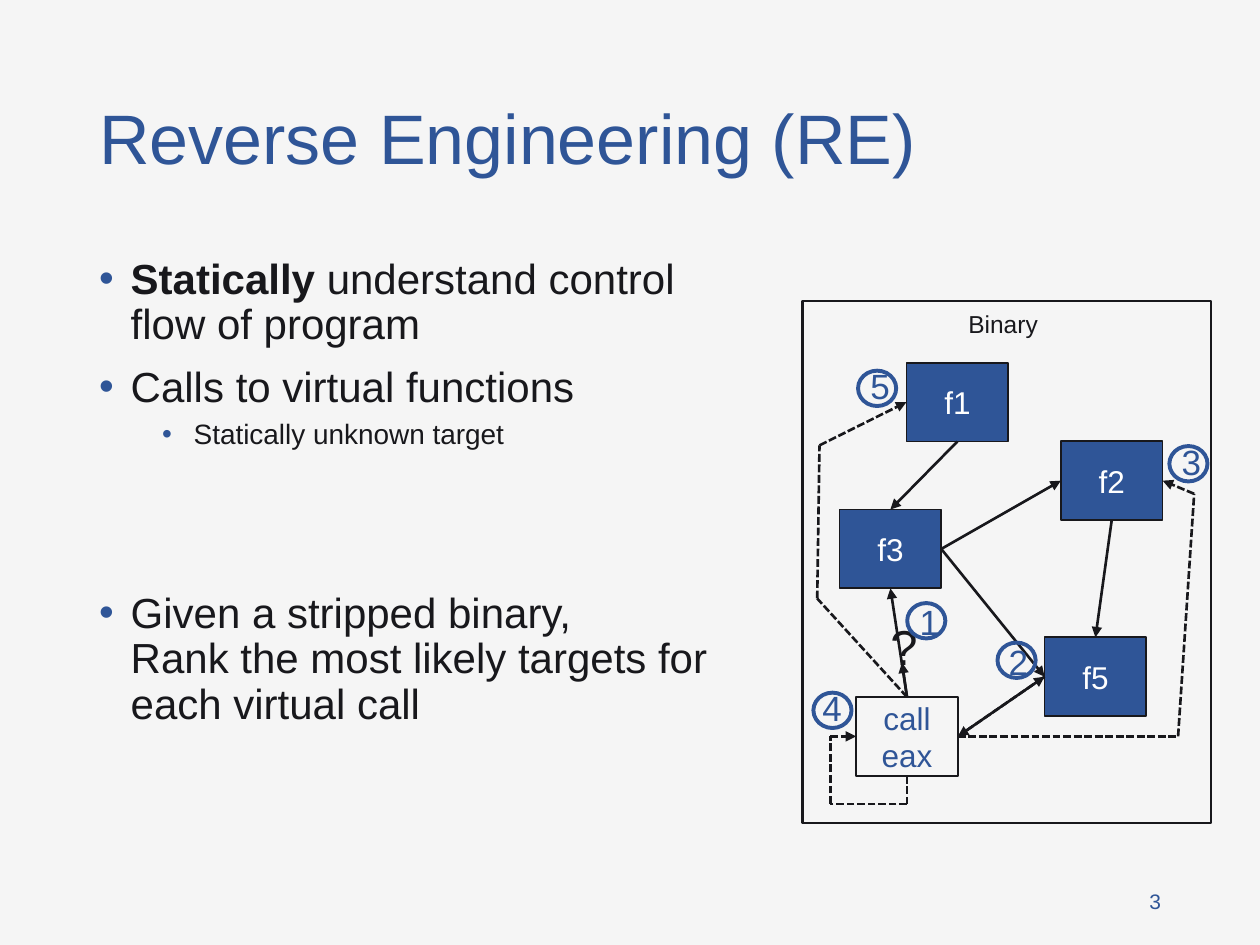
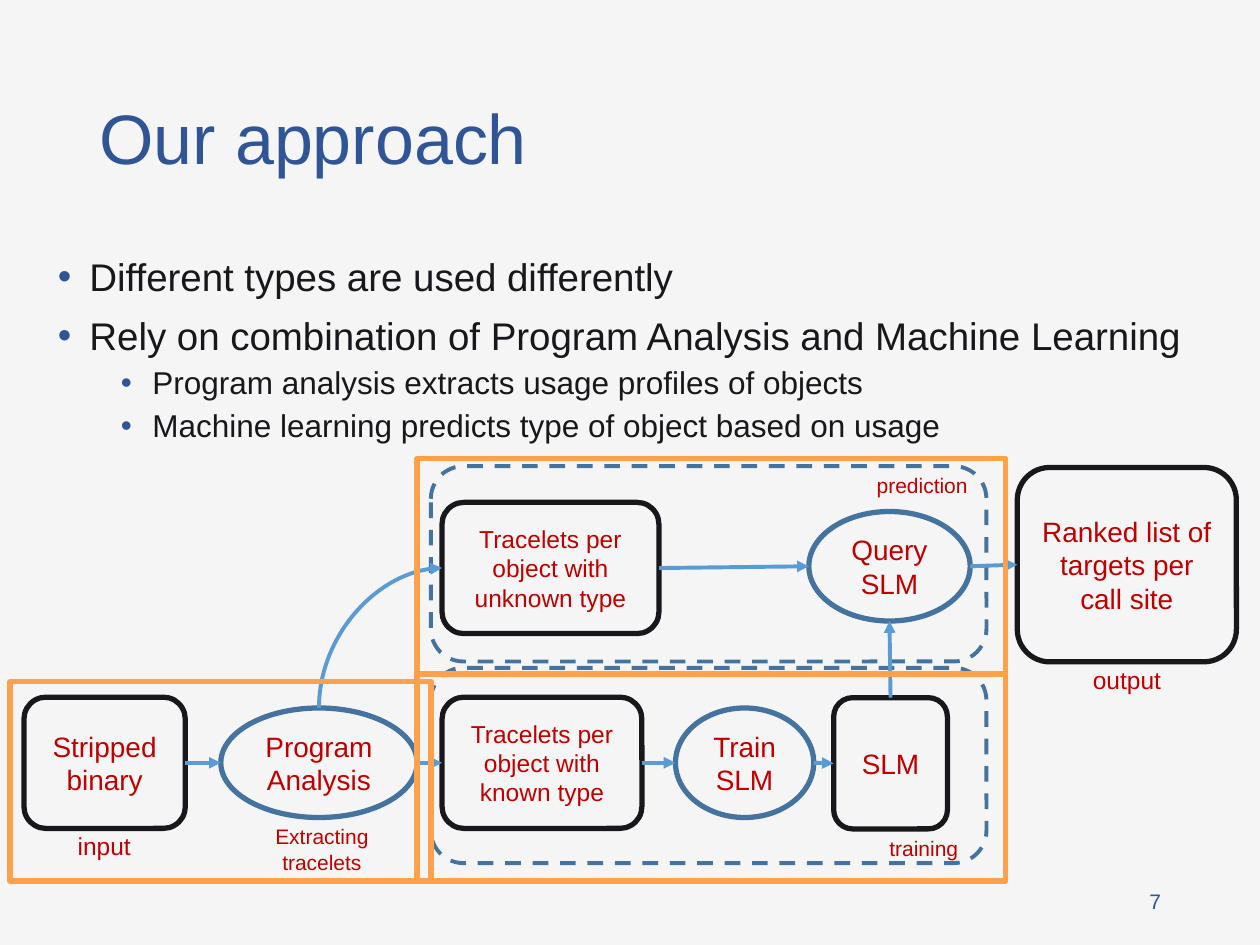
from dataclasses import dataclass
from itertools import pairwise
from typing import Optional, Union

from lxml.etree import SubElement
from pptx import Presentation
from pptx.dml.color import RGBColor
from pptx.enum.dml import MSO_LINE as Dash
from pptx.enum.shapes import MSO_CONNECTOR as Link, MSO_SHAPE as Kind
from pptx.enum.text import MSO_ANCHOR as Anchor, MSO_AUTO_SIZE as AutoSize, PP_ALIGN as Align
from pptx.oxml.ns import qn
from pptx.shapes.autoshape import Shape
from pptx.shapes.connector import Connector
from pptx.slide import Slide
from pptx.util import Pt

FONT = "Arial"
PAPER, INK, NAVY, WHITE = "F5F5F5", "18181C", "2F5597", "FFFFFF"
RED, STEEL, SKY, ORANGE = "C00000", "43739E", "5B9BD5", "FFA04D"
TOP, LEFT, BOTTOM, RIGHT = range(4)

Area = tuple[float, float, float, float]  # left, top, width, height
Point = tuple[float, float]
End = Union[Point, tuple[Shape, int]]  # a free point, or a shape and its side


@dataclass
class Item:
    text: str
    size: float
    level: int = 0
    before: float = 10
    lead: str = ""


@dataclass
class Node:
    text: str
    area: Area
    kind: Kind = Kind.RECTANGLE
    size: float = 18
    color: str = WHITE
    fill: Optional[str] = None
    line: str = INK
    width: float = 1
    dash: Optional[Dash] = None


@dataclass
class Caption:
    text: str
    area: Area
    size: float
    color: str = RED
    align: Align = Align.LEFT
    wrap: bool = True
    anchor: Anchor = Anchor.TOP


@dataclass
class Marker:
    digit: str
    left: float
    top: float
    shift: Point  # from the ring to its digit


@dataclass
class Route:
    stops: list[End]
    color: str = INK
    width: float = 1.5
    dashed: bool = False


def rgb(color: str) -> RGBColor:
    return RGBColor.from_string(color)


def style_runs(para, size: float, color: str) -> None:
    for span in para.runs:
        span.font.name, span.font.size = FONT, Pt(size)
        span.font.color.rgb = rgb(color)


def move(shape: Shape, area: Area) -> None:
    shape.left, shape.top, shape.width, shape.height = map(Pt, area)


# Shared page parts
def add_page(deck, title: str, number: int, body_area: Area, items: list[Item]) -> Slide:
    page = deck.slides.add_slide(deck.slide_layouts[1])
    heading, body = page.shapes.title, page.placeholders[1]
    move(heading, (49.5, 28.75, 621, 104.4))
    heading.text_frame.text = title
    heading.text_frame.vertical_anchor = Anchor.MIDDLE
    heading.text_frame.auto_size = AutoSize.NONE
    para = heading.text_frame.paragraphs[0]
    para.alignment, para.line_spacing = Align.LEFT, 0.9
    style_runs(para, 40, NAVY)

    move(body, body_area)
    body.text_frame.auto_size = AutoSize.NONE
    for index, item in enumerate(items):
        para = body.text_frame.add_paragraph() if index else body.text_frame.paragraphs[0]
        add_item(para, item)
    add_caption(page, Caption(str(number), (567, 500.5, 103.5, 28.75), 12, NAVY,
                              Align.RIGHT, anchor=Anchor.MIDDLE))
    return page


def add_item(para, item: Item) -> None:
    para.text = item.lead or item.text
    if item.lead:
        para.runs[0].font.bold = True
        para.add_run().text = item.text
    para.level, para.line_spacing = item.level, 0.9
    para.space_before = Pt(item.before)
    style_runs(para, item.size, INK)
    props = para._p.get_or_add_pPr()
    props.set("marL", str(Pt(18 + 36 * item.level)))
    props.set("indent", str(Pt(-18)))
    SubElement(SubElement(props, qn("a:buClr")), qn("a:srgbClr")).set("val", NAVY)
    SubElement(props, qn("a:buChar")).set("char", "•")


# Drawing parts
def add_caption(page: Slide, caption: Caption) -> None:
    box = page.shapes.add_textbox(*map(Pt, caption.area))
    frame = box.text_frame
    frame.word_wrap, frame.vertical_anchor = caption.wrap, caption.anchor
    para = frame.paragraphs[0]
    para.text, para.alignment = caption.text, caption.align
    style_runs(para, caption.size, caption.color)


def add_node(page: Slide, node: Node) -> Shape:
    box = page.shapes.add_shape(node.kind, *map(Pt, node.area))
    box.shadow.inherit = False
    if node.fill:
        box.fill.solid()
        box.fill.fore_color.rgb = rgb(node.fill)
    else:
        box.fill.background()
    box.line.color.rgb, box.line.width = rgb(node.line), Pt(node.width)
    if node.dash:
        box.line.dash_style = node.dash
    if node.text:
        box.text_frame.text = node.text
        box.text_frame.vertical_anchor = Anchor.MIDDLE
        para = box.text_frame.paragraphs[0]
        para.alignment = Align.CENTER
        style_runs(para, node.size, node.color)
    return box


def locate(end: End) -> Point:
    if not isinstance(end[0], Shape):
        return end
    box, side = end
    across = {LEFT: 0, RIGHT: 1}.get(side, 0.5)
    down = {TOP: 0, BOTTOM: 1}.get(side, 0.5)
    return (box.left + across * box.width) / Pt(1), (box.top + down * box.height) / Pt(1)


def joinable(end: End) -> bool:
    return isinstance(end[0], Shape) and end[0].auto_shape_type != Kind.OVAL


def style_connector(line: Connector, route: Route, arrow: bool) -> None:
    line.line.color.rgb, line.line.width = rgb(route.color), Pt(route.width)
    if route.dashed:
        line.line.dash_style = Dash.SQUARE_DOT
    if arrow:
        SubElement(line.element.spPr.get_or_add_ln(), qn("a:tailEnd")).set("type", "triangle")
    SubElement(line.element.spPr, qn("a:effectLst"))


def add_route(page: Slide, route: Route) -> None:
    """Draw the legs of a route, with an arrowhead on the last one."""
    legs = list(pairwise(route.stops))
    for index, (start, end) in enumerate(legs, 1):
        line = page.shapes.add_connector(
            Link.STRAIGHT, *map(Pt, locate(start) + locate(end)))
        if joinable(start):
            line.begin_connect(*start)
        if joinable(end):
            line.end_connect(*end)
        style_connector(line, route, index == len(legs))


def add_quarter_curve(page: Slide, start: Point, end: Point, route: Route) -> None:
    """Curve that leaves upwards and arrives from the left."""
    mid_x, mid_y = (start[0] + end[0]) / 2, (start[1] + end[1]) / 2
    half_w, half_h = (start[1] - end[1]) / 2, (end[0] - start[0]) / 2
    line = page.shapes.add_connector(Link.CURVE, *map(Pt, (
        mid_x + half_w, mid_y + half_h, mid_x - half_w, mid_y - half_h)))
    line.element.spPr.find(qn("a:xfrm")).set("rot", str(90 * 60000))
    line.element.spPr.find(qn("a:prstGeom")).set("prst", "curvedConnector2")
    style_connector(line, route, True)


def add_marker(page: Slide, marker: Marker) -> None:
    shift_x, shift_y = marker.shift
    add_caption(page, Caption(
        marker.digit, (marker.left + shift_x, marker.top + shift_y, 28, 31.5), 20, NAVY))
    add_node(page, Node("", (marker.left, marker.top, 21.8, 20.2), Kind.OVAL,
                        line=NAVY, width=2.25))


# Slide with the call graph
def build_reverse_engineering(deck) -> None:
    page = add_page(deck, "Reverse Engineering (RE)", 3, (49.5, 143.75, 377.3, 356.4), [
        Item(" understand control flow of program", 24, lead="Statically"),
        Item("Calls to virtual functions", 24),
        Item("Statically unknown target", 16, 1, 5),
        Item("Given a stripped binary, \nRank the most likely targets for each virtual call",
             24, before=81),
    ])
    add_node(page, Node("", (458.6, 172.1, 233.4, 298.2), width=1.5))
    add_caption(page, Caption("Binary", (485, 172.8, 176.4, 24.5), 14, INK, Align.CENTER))
    add_caption(page, Caption("?", (501.8, 348.5, 40.3, 41), 28, INK))

    corners = {"f1": (518, 207.3), "f2": (606.2, 252.2), "f5": (596.9, 364.2),
               "f3": (479.7, 291.2)}
    f1, f2, f5, f3 = [add_node(page, Node(name, corner + (58.2, 45), fill=NAVY))
                      for name, corner in corners.items()]
    call = add_node(page, Node("call eax", (489.2, 398.3, 58.2, 45), color=NAVY, fill=PAPER))

    routes = [
        Route([(f1, BOTTOM), (f3, TOP)]),
        Route([(f3, RIGHT), (f2, LEFT)]),
        Route([(f3, RIGHT), (f5, LEFT)]),
        Route([(f2, BOTTOM), (f5, TOP)]),
        Route([(call, TOP), (f3, BOTTOM)]),
        Route([(call, TOP), (515.5, 378.7)]),
        Route([(f5, LEFT), (call, RIGHT)]),
        Route([(call, RIGHT), (f5, LEFT)], dashed=True),
        Route([(call, TOP), (467, 342), (468.3, 254.5), (f1, LEFT)], dashed=True),
        Route([(call, RIGHT), (673.2, 420.8), (682.4, 282.2), (f2, RIGHT)], dashed=True),
        Route([(call, BOTTOM), (518.3, 459.4), (474.5, 459.4), (474.5, 420.8), (call, LEFT)],
              dashed=True),
    ]
    for route in routes:
        add_route(page, route)
    for marker in [
        Marker("1", 518.4, 344.6, (0, -5)),
        Marker("2", 570, 367.2, (-0.7, -5)),
        Marker("3", 668.2, 254.9, (0, -6.5)),
        Marker("4", 464.8, 395.8, (-2, -7)),
        Marker("5", 490.3, 211.8, (0, -7)),
    ]:
        add_marker(page, marker)


# Slide with the processing stages
def build_approach(deck) -> None:
    page = add_page(deck, "Our approach", 7, (25.9, 143.75, 686.9, 356.4), [
        Item("Different types are used differently", 22),
        Item("Rely on combination of Program Analysis and Machine Learning", 22),
        Item("Program analysis extracts usage profiles of objects", 18, 1, 5),
        Item("Machine learning predicts type of object based on usage", 18, 1, 5),
    ])

    def data(text: str, area: Area, size: float = 16) -> Shape:
        return add_node(page, Node(text, area, Kind.ROUNDED_RECTANGLE, size, RED, width=3))

    def step(text: str, area: Area) -> Shape:
        return add_node(page, Node(text, area, Kind.OVAL, 16, RED, line=STEEL, width=3))

    binary = data("Stripped binary", (13.7, 398.4, 92.2, 75))
    known = data("Tracelets per object with known type", (252.6, 398.4, 114.2, 75), 14)
    model = data("SLM", (476.4, 398.7, 65, 75))
    ranked = data("Ranked list of targets per call site", (581.3, 267.1, 125.2, 111.1))
    unknown = data("Tracelets per object with unknown type", (252.6, 287.1, 124, 75), 14)
    analysis = step("Program Analysis", (126.2, 404.6, 112.2, 62.6))
    train = step("Train SLM", (386, 404.6, 79, 62.6))
    query = step("Query SLM", (462.2, 292.3, 92.2, 62.6))

    for top in (266.4, 381.6):
        add_node(page, Node("", (246.2, top, 317.5, 111.6), Kind.ROUNDED_RECTANGLE,
                            line=STEEL, width=2.25, dash=Dash.DASH))

    arrow = Route([], SKY, 2.25)
    flow = [binary, analysis, known, train, model]
    links = [((a, RIGHT), (b, LEFT)) for a, b in
             [*pairwise(flow), (unknown, query), (query, ranked)]]
    for start, end in [*links, ((model, TOP), (query, BOTTOM))]:
        add_route(page, Route([start, end], arrow.color, arrow.width))
    add_quarter_curve(page, locate((analysis, TOP)), locate((unknown, LEFT)), arrow)

    for area in [(5.8, 389.5, 240.5, 114), (238.3, 385, 336.2, 118.5),
                 (238.3, 262.1, 336.2, 123.1)]:
        add_node(page, Node("", area, line=ORANGE, width=3))
    for caption in [
        Caption("training", (501.1, 473.8, 56.9, 21.6), 12, wrap=False),
        Caption("prediction", (493.9, 266.6, 69.8, 21.6), 12, wrap=False),
        Caption("Extracting\ntracelets", (148.3, 467.3, 71.3, 36), 12,
                align=Align.CENTER, wrap=False),
        Caption("input", (28.3, 471.6, 62.6, 24.5), 14, align=Align.CENTER),
        Caption("output", (612.7, 376.6, 62.6, 24.5), 14, align=Align.CENTER),
    ]:
        add_caption(page, caption)


def main() -> None:
    deck = Presentation()
    deck.slide_width, deck.slide_height = Pt(720), Pt(540)
    paper = deck.slide_master.background.fill
    paper.solid()
    paper.fore_color.rgb = rgb(PAPER)
    build_reverse_engineering(deck)
    build_approach(deck)
    deck.save("out.pptx")


if __name__ == "__main__":
    main()
